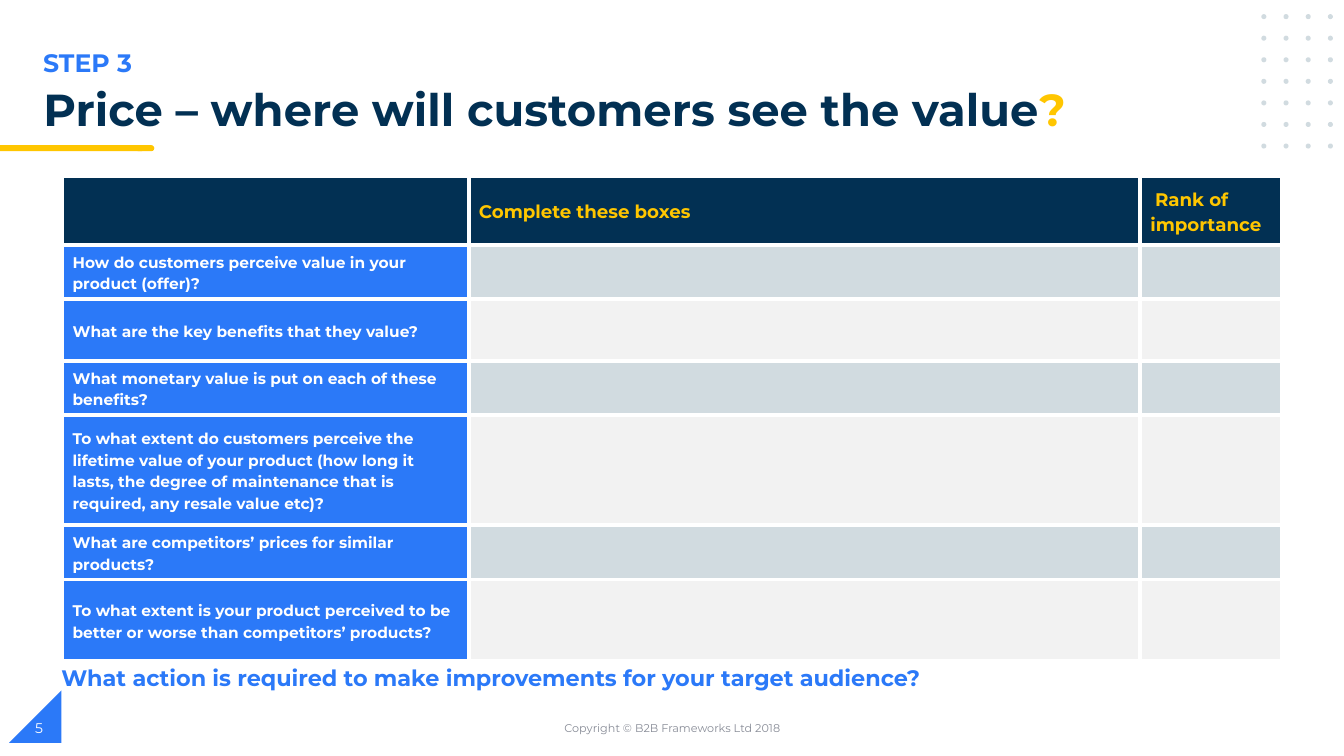
from dataclasses import dataclass

from lxml.etree import SubElement
from pptx import Presentation
from pptx.dml.color import RGBColor
from pptx.enum.shapes import MSO_SHAPE
from pptx.enum.text import MSO_ANCHOR, PP_ALIGN
from pptx.oxml.ns import qn
from pptx.util import Inches, Pt


@dataclass(frozen=True)
class Theme:
    font: str = "Montserrat"
    navy: str = "023053"
    blue: str = "2B79F8"
    yellow: str = "FFC600"
    mist: str = "D1DBE0"
    pale: str = "F2F2F2"
    grey: str = "888C97"
    white: str = "FFFFFF"
    title_size: int = 32
    step_size: int = 18
    action_size: int = 16
    header_size: int = 13
    spacer_size: int = 12
    question_size: int = 11
    number_size: int = 10
    footer_size: int = 8


THEME = Theme()

QUESTIONS = [
    ("How do customers perceive value in your product (offer)?", 0.54),
    ("What are the key benefits that they value?", 0.61),
    ("What monetary value is put on each of these benefits?", 0.54),
    ("To what extent do customers perceive the lifetime value of your product "
     "(how long it lasts, the degree of maintenance that is required, "
     "any resale value etc)?", 1.09),
    ("What are competitors’ prices for similar products?", 0.54),
    ("To what extent is your product perceived to be better or worse than "
     "competitors’ products?", 0.81),
]
HEADER_HEIGHT = 0.68
COLUMN_WIDTHS = [4.03, 6.66, 1.4]


def add_run(paragraph, text, *, size, color, bold=False):
    run = paragraph.add_run()
    run.text = text
    run.font.name = THEME.font
    run.font.size = Pt(size)
    run.font.bold = bold
    run.font.color.rgb = RGBColor.from_string(color)


def add_text(slide, box, text, *, align=PP_ALIGN.LEFT, anchor=MSO_ANCHOR.TOP, **style):
    frame = slide.shapes.add_textbox(*map(Inches, box)).text_frame
    frame.word_wrap = True
    frame.vertical_anchor = anchor
    frame.paragraphs[0].alignment = align
    add_run(frame.paragraphs[0], text, **style)


def add_block(slide, kind, box, color):
    shape = slide.shapes.add_shape(kind, *map(Inches, box))
    shape.shadow.inherit = False
    shape.fill.solid()
    shape.fill.fore_color.rgb = RGBColor.from_string(color)
    shape.line.fill.background()
    return shape


def add_decoration(slide):
    corner = add_block(slide, MSO_SHAPE.RIGHT_TRIANGLE, (0.09, 6.85, 0.52, 0.52), THEME.blue)
    corner._element.spPr.xfrm.set("flipH", "1")
    # Title underline with a rounded end
    add_block(slide, MSO_SHAPE.FLOWCHART_TERMINATOR, (1.34, 1.44, 0.19, 0.06), THEME.yellow)
    add_block(slide, MSO_SHAPE.RECTANGLE, (0, 1.44, 1.41, 0.06), THEME.yellow)
    # Dot grid
    for row in range(7):
        for column in range(4):
            dot_box = (12.51 + column * 0.22, 0.14 + row * 0.214, 0.05, 0.05)
            add_block(slide, MSO_SHAPE.OVAL, dot_box, THEME.mist)


def set_title(slide):
    title = slide.shapes.title
    title.left, title.top, title.width, title.height = map(Inches, (0.33, 0.82, 11.59, 0.56))
    frame = title.text_frame
    frame.word_wrap = True
    frame.vertical_anchor = MSO_ANCHOR.TOP
    paragraph = frame.paragraphs[0]
    paragraph.alignment = PP_ALIGN.LEFT
    paragraph.line_spacing = 0.9
    for text, color in (("Price – where will customers see the value", THEME.navy),
                        ("?", THEME.yellow)):
        add_run(paragraph, text, size=THEME.title_size, color=color, bold=True)


def set_borders(cell, color, points):
    properties = cell._tc.get_or_add_tcPr()
    for position, side in enumerate(("lnL", "lnR", "lnT", "lnB")):
        line = properties.makeelement(qn(f"a:{side}"), {"w": str(Pt(points))})
        fill = SubElement(line, qn("a:solidFill"))
        SubElement(fill, qn("a:srgbClr"), val=color)
        properties.insert(position, line)


def format_cell(cell, fill, runs=()):
    """Fill a cell and write its (text, size, color) runs."""
    cell.fill.solid()
    cell.fill.fore_color.rgb = RGBColor.from_string(fill)
    set_borders(cell, THEME.white, 3)
    cell.vertical_anchor = MSO_ANCHOR.MIDDLE
    cell.margin_left = cell.margin_right = Inches(0.1)
    cell.margin_top = cell.margin_bottom = 0
    paragraph = cell.text_frame.paragraphs[0]
    paragraph.line_spacing = 1.15
    for text, size, color in runs:
        add_run(paragraph, text, size=size, color=color, bold=True)


def add_question_table(slide):
    heights = [HEADER_HEIGHT] + [height for _, height in QUESTIONS]
    table = slide.shapes.add_table(
        len(heights), len(COLUMN_WIDTHS), Inches(0.62), Inches(1.75),
        Inches(sum(COLUMN_WIDTHS)), Inches(sum(heights))).table
    table.horz_banding = False
    for column, width in zip(table.columns, COLUMN_WIDTHS):
        column.width = Inches(width)
    for row, height in zip(table.rows, heights):
        row.height = Inches(height)

    # Header row
    headers = [
        [],
        [("Complete these boxes", THEME.header_size, THEME.yellow)],
        [(" ", THEME.spacer_size, THEME.yellow),
         ("Rank of importance", THEME.header_size, THEME.yellow)],
    ]
    for column, runs in enumerate(headers):
        format_cell(table.cell(0, column), THEME.navy, runs)

    # Questions with banded answer cells
    for row, (question, _) in enumerate(QUESTIONS, start=1):
        format_cell(table.cell(row, 0), THEME.blue,
                    [(question, THEME.question_size, THEME.white)])
        for column in (1, 2):
            format_cell(table.cell(row, column), THEME.mist if row % 2 else THEME.pale)


def main():
    presentation = Presentation()
    presentation.slide_width = Inches(13.33)
    presentation.slide_height = Inches(7.5)
    slide = presentation.slides.add_slide(presentation.slide_layouts[5])

    add_decoration(slide)
    # Heading
    add_text(slide, (0.33, 0.42, 6.69, 0.4), "STEP 3",
             size=THEME.step_size, color=THEME.blue, bold=True)
    set_title(slide)
    add_question_table(slide)
    # Closing question and footer
    add_text(slide, (0.51, 6.54, 8.83, 0.37),
             "What action is required to make improvements for your target audience?",
             size=THEME.action_size, color=THEME.blue, bold=True)
    add_text(slide, (4.42, 7.02, 4.5, 0.4), "Copyright © B2B Frameworks Ltd 2018",
             align=PP_ALIGN.CENTER, anchor=MSO_ANCHOR.MIDDLE,
             size=THEME.footer_size, color=THEME.grey)
    add_text(slide, (0.25, 7.02, 3, 0.4), "5", anchor=MSO_ANCHOR.MIDDLE,
             size=THEME.number_size, color=THEME.white)
    presentation.save("out.pptx")


if __name__ == "__main__":
    main()
